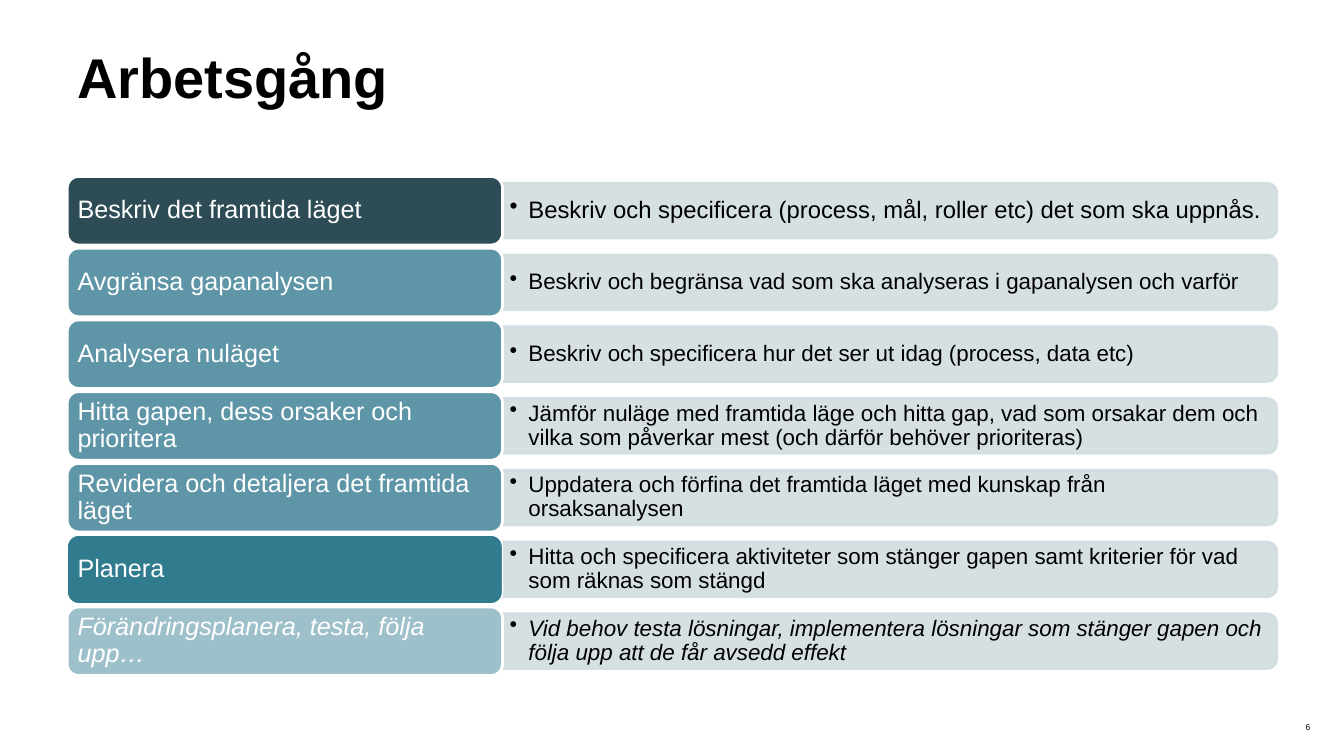
import pptx
import pptx.util
import pptx.dml.color
import pptx.enum.shapes
import pptx.enum.text
import pptx.oxml
import lxml.etree

Pt = pptx.util.Pt
SHAPE = pptx.enum.shapes.MSO_SHAPE
ANCHOR = pptx.enum.text.MSO_ANCHOR
ALIGN = pptx.enum.text.PP_ALIGN


def rgb(value):
    return pptx.dml.color.RGBColor.from_string(value)


class Deck:
    font = "Arial"
    black, white, bar_color = "000000", "FFFFFF", "D2DDE1"
    insets = (5, 2.5, 5, 2.5)

    def __init__(self, width, height):
        self.prs = pptx.Presentation()
        self.prs.slide_width, self.prs.slide_height = Pt(width), Pt(height)
        self.s = self.prs.slides.add_slide(self.prs.slide_layouts[6])

    def set_text(self, sp, text, size, color, insets, anchor=ANCHOR.TOP,
                 align=ALIGN.LEFT, bold=False, italic=False, spacing=None, bullet=0):
        tf = sp.text_frame
        tf.word_wrap = True
        tf.vertical_anchor = anchor
        tf.margin_left, tf.margin_top, tf.margin_right, tf.margin_bottom = map(Pt, insets)
        p = tf.paragraphs[0]
        if bullet:
            pPr = p._p.get_or_add_pPr()
            pPr.set("marL", str(Pt(bullet)))
            pPr.set("indent", str(-Pt(bullet)))
            bu = lxml.etree.SubElement(pPr, pptx.oxml.ns.qn("a:buChar"))
            bu.set("char", "•")
        p.alignment = align
        p.line_spacing = spacing
        r = p.add_run()
        r.text = text
        r.font.name, r.font.size = self.font, Pt(size)
        r.font.bold, r.font.italic = bold, italic
        r.font.color.rgb = rgb(color)

    def text(self, x, y, w, h, text, size, insets, **style):
        sp = self.s.shapes.add_textbox(Pt(x), Pt(y), Pt(w), Pt(h))
        self.set_text(sp, text, size, self.black, insets, **style)

    def shape(self, kind, x, y, w, h, fill, line, line_width):
        sp = self.s.shapes.add_shape(kind, Pt(x), Pt(y), Pt(w), Pt(h))
        sp.shadow.inherit = False
        sp.fill.solid()
        sp.fill.fore_color.rgb = rgb(fill)
        sp.line.color.rgb = rgb(line)
        sp.line.width = Pt(line_width)
        return sp

    def bar(self, x, y, w, h):
        sp = self.shape(SHAPE.ROUND_2_SAME_RECTANGLE, x + (w - h) / 2, y + (h - w) / 2,
                        h, w, self.bar_color, self.bar_color, 2)
        sp.rotation = 90
        for clr in sp._element.spPr.iter(pptx.oxml.ns.qn("a:srgbClr")):
            alpha = lxml.etree.SubElement(clr, pptx.oxml.ns.qn("a:alpha"))
            alpha.set("val", "90000")

    def label(self, x, y, w, h, text, fill, line_width, italic):
        sp = self.shape(SHAPE.ROUNDED_RECTANGLE, x, y, w, h, fill, self.white, line_width)
        self.set_text(sp, text, 18, self.white, self.insets,
                      anchor=ANCHOR.MIDDLE, italic=italic, spacing=0.9)

    def detail(self, x, y, w, h, text, size, italic):
        self.text(x, y, w, h, text, size, self.insets,
                  anchor=ANCHOR.MIDDLE, italic=italic, spacing=0.9, bullet=13.5)


STEPS = [
    ("Beskriv det framtida läget", "2E4C55", 2, 17, False,
     "Beskriv och specificera (process, mål, roller etc) det som ska uppnås."),
    ("Avgränsa gapanalysen", "5E96A8", 2, 16, False,
     "Beskriv och begränsa vad som ska analyseras i gapanalysen och varför"),
    ("Analysera nuläget", "5E96A8", 2, 16, False,
     "Beskriv och specificera hur det ser ut idag (process, data etc)"),
    ("Hitta gapen, dess orsaker och prioritera", "5E96A8", 2, 16, False,
     "Jämför nuläge med framtida läge och hitta gap, vad som orsakar dem och "
     "vilka som påverkar mest (och därför behöver prioriteras)"),
    ("Revidera och detaljera det framtida läget", "5E96A8", 2, 16, False,
     "Uppdatera och förfina det framtida läget med kunskap från orsaksanalysen"),
    ("Planera", "307C8E", 1, 16, False,
     "Hitta och specificera aktiviteter som stänger gapen samt kriterier för vad "
     "som räknas som stängd"),
    ("Förändringsplanera, testa, följa upp…", "9EC0CB", 2, 16, True,
     "Vid behov testa lösningar, implementera lösningar som stänger gapen och "
     "följa upp att de får avsedd effekt"),
]
LEFT, TOP, PITCH = 48, 126, 51.25
LABEL_W, LABEL_H = 311, 49
BAR_W, BAR_H, DETAIL_H = 553, 39, 35.5


def main():
    deck = Deck(960, 540)
    deck.text(888, 516, 48, 7.2, "6", 6, (0, 0, 0, 0), align=ALIGN.RIGHT)
    deck.text(LEFT, 21.6, 864, 90, "Arbetsgång", 40, (7.2, 8.5, 7.2, 3.6), bold=True)
    bar_x = LEFT + LABEL_W
    for i, (name, fill, line_width, size, italic, detail) in enumerate(STEPS):
        y = TOP + i * PITCH
        middle = y + LABEL_H / 2
        deck.bar(bar_x, middle - BAR_H / 2, BAR_W, BAR_H)
        deck.detail(bar_x, middle - DETAIL_H / 2, BAR_W - 2, DETAIL_H, detail, size, italic)
        deck.label(LEFT, y, LABEL_W, LABEL_H, name, fill, line_width, italic)
    deck.prs.save("out.pptx")


if __name__ == "__main__":
    main()
